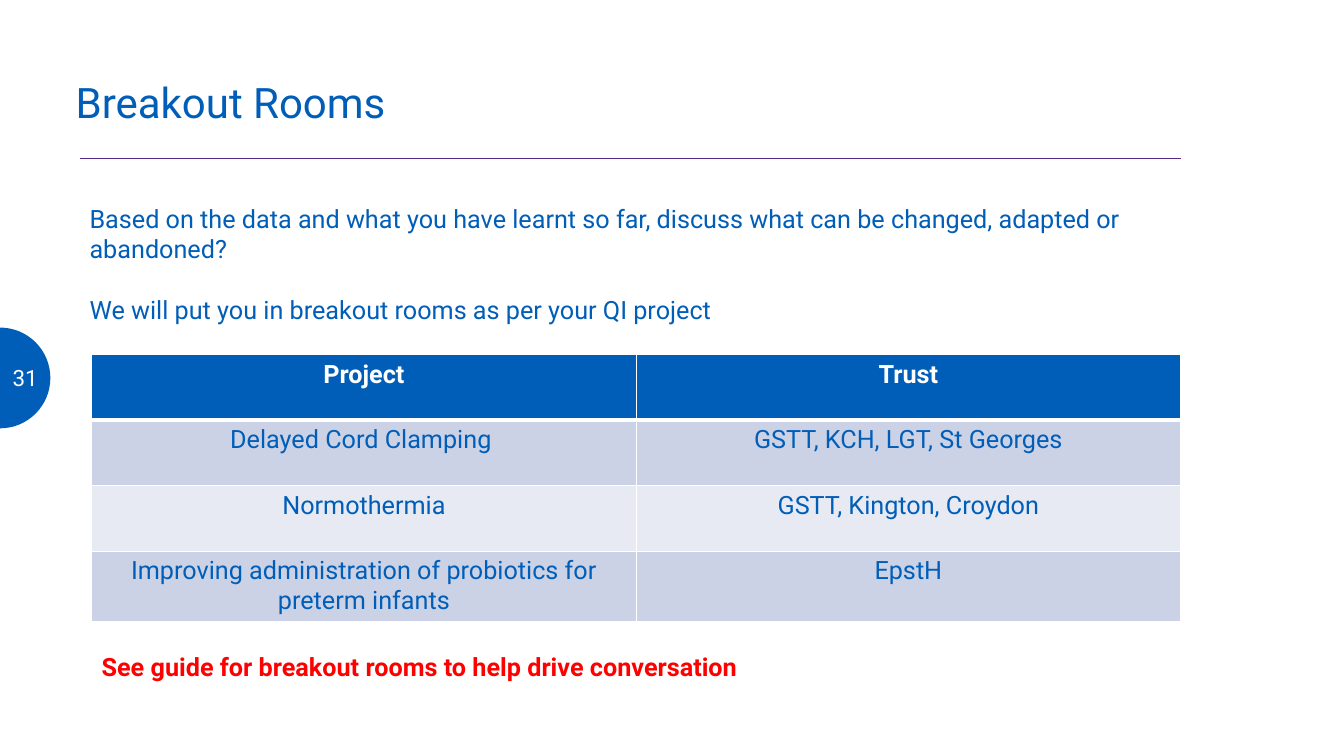
from math import cos, pi, sin

from lxml.etree import SubElement
from pptx import Presentation
from pptx.dml.color import RGBColor as Rgb
from pptx.enum.shapes import MSO_CONNECTOR as Link
from pptx.enum.text import MSO_ANCHOR as Anchor, MSO_AUTO_SIZE as Fit, PP_ALIGN as Align
from pptx.oxml import parse_xml
from pptx.oxml.ns import nsdecls, qn
from pptx.util import Inches, Pt

TITLE = "Breakout Rooms"
PAGE = "31"
INTRO = [
    "Based on the data and what you have learnt so far, discuss what can be changed, adapted or abandoned?",
    "We will put you in breakout rooms as per your QI project",
]
ROWS = [
    ("Project", "Trust"),
    ("Delayed Cord Clamping ", "GSTT, KCH, LGT, St Georges"),
    ("Normothermia", "GSTT, Kington, Croydon"),
    ("Improving administration of probiotics for preterm infants", "EpstH"),
]
GUIDE = "See guide for breakout rooms to help drive conversation"

COLORS = {
    "blue": "005EB8", "rule": "572A86", "white": "FFFFFF",
    "red": "FF0000", "odd": "CCD2E6", "even": "E7EAF3",
}
FONT = "Roboto"
WIDE, HIGH = 13.33, 7.5
LEFT, RIGHT = 0.79, 11.71
GRID, TOP, ROW = 0.91, 3.52, 0.65
DISC, STEPS = 0.5, 32


def hue(name):
    return Rgb.from_string(COLORS[name])


def write(frame, *lines, size=18, color="blue", bold=False, align=Align.LEFT, gap=0):
    frame.word_wrap = True
    for i, line in enumerate(lines):
        para = frame.paragraphs[0] if i == 0 else frame.add_paragraph()
        para.alignment = align
        if i:
            para.space_before = Pt(gap)
        run = para.add_run()
        run.text = line
        font = run.font
        font.name, font.size, font.bold = FONT, Pt(size), bold
        font.color.rgb = hue(color)
    return frame


def box(x, y, w, h):
    return slide.shapes.add_textbox(*map(Inches, (x, y, w, h))).text_frame


def edge(cell, widths):
    props = cell._tc.get_or_add_tcPr()
    for i, (side, width) in enumerate(zip("LRTB", widths)):
        props.insert(i, parse_xml(
            f'<a:ln{side} {nsdecls("a")} w="{Pt(width)}"><a:solidFill>'
            f'<a:srgbClr val="{COLORS["white"]}"/></a:solidFill></a:ln{side}>'))


deck = Presentation()
deck.slide_width, deck.slide_height = Inches(WIDE), Inches(HIGH)
slide = deck.slides.add_slide(deck.slide_layouts[5])

rule = slide.shapes.add_connector(
    Link.STRAIGHT, *map(Inches, (LEFT, 1.57, RIGHT, 1.57)))
rule.line.color.rgb, rule.line.width = hue("rule"), Pt(0.5)
SubElement(rule._element.spPr, qn("a:effectLst"))

arc = [(Inches(DISC * sin(pi * i / STEPS)), Inches(HIGH / 2 - DISC * cos(pi * i / STEPS)))
       for i in range(STEPS + 1)]
pen = slide.shapes.build_freeform(*arc[0])
pen.add_line_segments(arc[1:], close=True)
disc = pen.convert_to_shape()
disc.shadow.inherit = False
disc.fill.solid()
disc.fill.fore_color.rgb = hue("blue")
disc.line.fill.background()

head = slide.shapes.title
head.left, head.top, head.width, head.height = map(Inches, (0.65, 0.55, 11.05, 0.98))
frame = write(head.text_frame, TITLE, size=30)
frame.auto_size, frame.vertical_anchor = Fit.NONE, Anchor.MIDDLE
frame.paragraphs[0].line_spacing = 0.9

page = write(box(0, 3.58, DISC, 0.33), PAGE, size=16, color="white", align=Align.CENTER)
page.margin_left = page.margin_right = page.margin_top = page.margin_bottom = 0
page.vertical_anchor = Anchor.MIDDLE

write(box(LEFT, 1.97, 10.77, 1.92), *INTRO, gap=21.5)

table = slide.shapes.add_table(
    len(ROWS), len(ROWS[0]),
    *map(Inches, (GRID, TOP, RIGHT - GRID, ROW * len(ROWS)))).table
for r, row in enumerate(ROWS):
    table.rows[r].height = Inches(ROW)
    for c, text in enumerate(row):
        cell = table.cell(r, c)
        write(cell.text_frame, text, color="blue" if r else "white",
              bold=r == 0, align=Align.CENTER)
        cell.fill.solid()
        cell.fill.fore_color.rgb = hue("blue" if r == 0 else "odd" if r % 2 else "even")
        edge(cell, (1, 1, 3 if r == 1 else 1, 3 if r == 0 else 1))

write(box(GRID, 6.41, 9.22, 0.4), GUIDE, color="red", bold=True)

deck.save("out.pptx")
